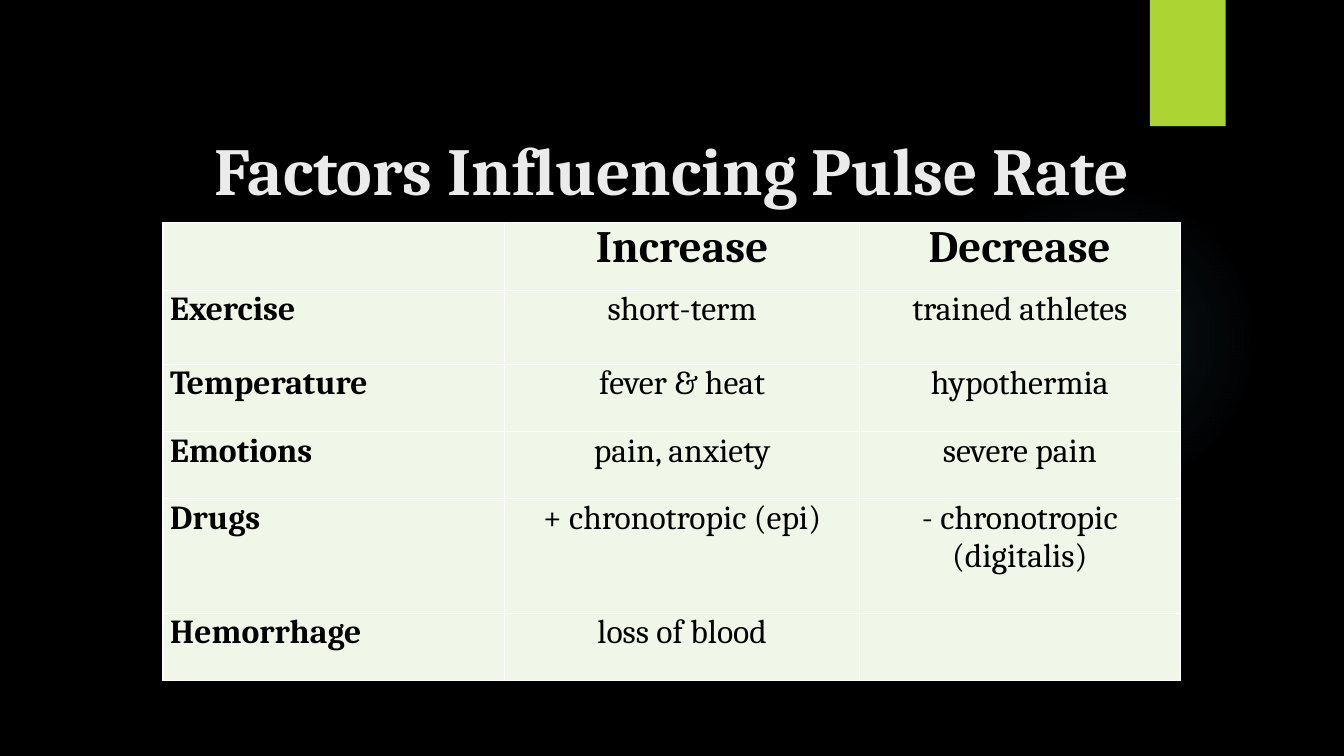
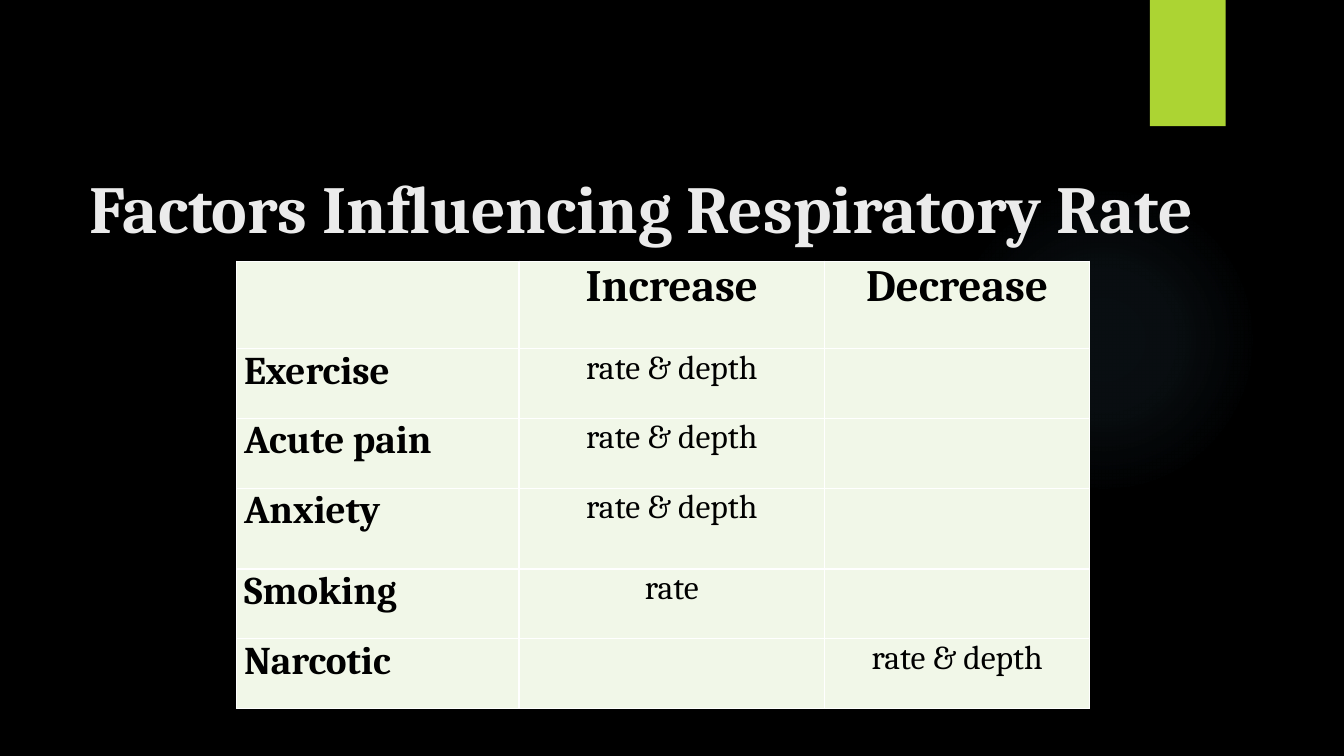
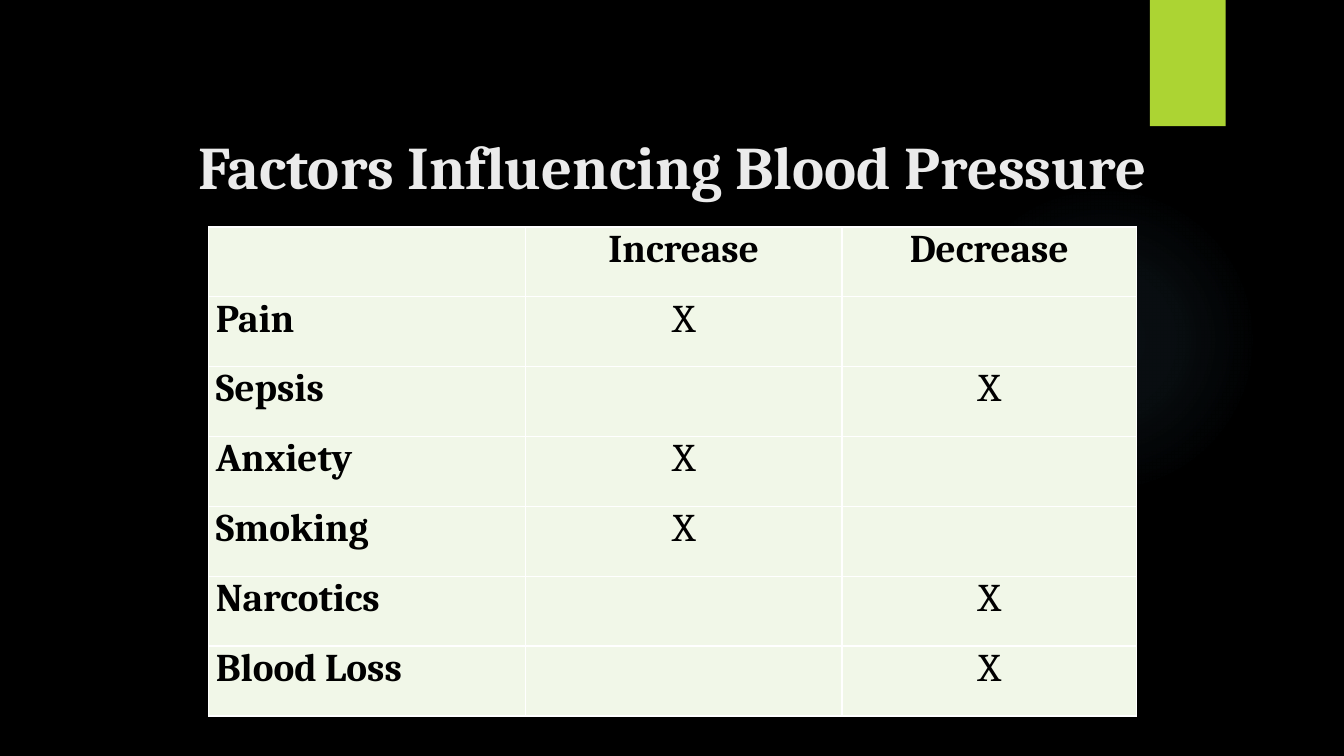
"""Build three slides on the factors that change vital signs."""
import pptx
import pptx.util
import pptx.dml.color
import pptx.enum.shapes
import pptx.enum.text
import pptx.oxml
import pptx.oxml.ns

Cm, Pt = pptx.util.Cm, pptx.util.Pt
ALIGN = pptx.enum.text.PP_ALIGN
FONT = "Cambria"
COLOR = {"back": "000000", "bar": "ACD433", "glow": "7AC4F0", "title": "EBEBEB",
         "cell": "F1F7E8", "text": "000000", "line": "FFFFFF"}
GLOW = [(0, 7), (36, 6), (69, 0)]
HEAD = ("", "Increase", "Decrease")

SLIDES = [
    {"title": "Factors Influencing Pulse Rate", "size": 48, "align": ALIGN.CENTER,
     "box": (3.89, 2.87, 26.09, 2.77), "at": (4.11, 5.61),
     "cols": (8.61, 8.94, 8.08), "rows": (1.71, 1.87, 1.69, 1.69, 2.88, 1.7),
     "sizes": {"head": 32, "label": 24, "body": 24},
     "data": [("Exercise", "short-term", "trained athletes"),
              ("Temperature", "fever & heat", "hypothermia"),
              ("Emotions", "pain, anxiety", "severe pain"),
              ("Drugs", "+ chronotropic (epi)", "- chronotropic (digitalis)"),
              ("Hemorrhage", "loss of blood", "")]},
    {"title": "Factors Influencing Respiratory Rate", "size": 48, "align": ALIGN.LEFT,
     "box": (2.01, 3.81, 29.44, 2.77), "at": (5.97, 6.58),
     "cols": (7.11, 7.7, 6.68), "rows": (2.21, 1.76, 1.76, 2.03, 1.76, 1.76),
     "sizes": {"head": 32, "label": 28, "body": 24},
     "data": [("Exercise", "rate & depth", ""),
              ("Acute pain", "rate & depth", ""),
              ("Anxiety", "rate & depth", ""),
              ("Smoking", "rate", ""),
              ("Narcotic", "", "rate & depth")]},
    {"title": "Factors Influencing Blood Pressure", "size": 43.2, "align": ALIGN.CENTER,
     "box": (3.4, 2.87, 27.08, 2.59), "at": (5.26, 5.72),
     "cols": (7.98, 7.98, 7.42), "rows": (1.76,) * 7,
     "sizes": {"head": 28, "label": 28, "body": 28},
     "data": [("Pain", "X", ""),
              ("Sepsis", "", "X"),
              ("Anxiety", "X", ""),
              ("Smoking", "X", ""),
              ("Narcotics", "", "X"),
              ("Blood Loss", "", "X")]},
]


def rgb(name):
    return pptx.dml.color.RGBColor.from_string(COLOR[name])


def parse(text):
    return pptx.oxml.parse_xml(text.replace(">", " " + pptx.oxml.ns.nsdecls("a") + ">", 1))


def style(part, size, color, bold, align):
    part.alignment = align
    for run in part.runs:
        font = run.font
        font.name, font.size, font.bold = FONT, Pt(size), bold
        font.color.rgb = rgb(color)


def add_shape(slide, kind, box):
    shape = slide.shapes.add_shape(kind, *map(Cm, box))
    shape.shadow.inherit = False
    shape.line.fill.background()
    return shape


def set_master(deck, slide):
    master = deck.slide_master
    fill = master.background.fill
    fill.solid()
    fill.fore_color.rgb = rgb("back")
    kinds = pptx.enum.shapes.MSO_SHAPE
    glow = add_shape(slide, kinds.OVAL, (23.9, 4.65, 7.82, 7.82))
    glow.fill.background()
    stops = "".join(
        f'<a:gs pos="{pos * 1000}"><a:srgbClr val="{COLOR["glow"]}">'
        f'<a:alpha val="{alpha * 1000}"/></a:srgbClr></a:gs>' for pos, alpha in GLOW)
    props = glow.element.spPr
    props.replace(props.find(pptx.oxml.ns.qn("a:noFill")), parse(
        f'<a:gradFill><a:gsLst>{stops}</a:gsLst><a:path path="circle">'
        '<a:fillToRect l="50000" t="50000" r="50000" b="50000"/></a:path></a:gradFill>'))
    bar = add_shape(slide, kinds.RECTANGLE, (28.98, 0, 1.91, 3.18))
    bar.fill.solid()
    bar.fill.fore_color.rgb = rgb("bar")
    for spot, shape in enumerate((glow, bar), 2):
        master.shapes.element.insert(spot, shape.element)


def add_title(slide, item):
    title = slide.shapes.title
    title.left, title.top, title.width, title.height = map(Cm, item["box"])
    frame = title.text_frame
    frame.text = item["title"]
    frame.auto_size = pptx.enum.text.MSO_AUTO_SIZE.NONE
    frame.vertical_anchor = pptx.enum.text.MSO_ANCHOR.MIDDLE
    style(frame.paragraphs[0], item["size"], "title", True, item["align"])


def set_cell(cell, text, size, bold, align):
    cell.margin_left = cell.margin_right = Cm(0.18)
    cell.margin_top = cell.margin_bottom = 0
    cell.fill.solid()
    cell.fill.fore_color.rgb = rgb("cell")
    props = cell._tc.get_or_add_tcPr()
    for spot, side in enumerate("LRTB"):
        props.insert(spot, parse(
            f'<a:ln{side} w="12700"><a:solidFill><a:srgbClr val="{COLOR["line"]}"/>'
            f'</a:solidFill></a:ln{side}>'))
    cell.text_frame.text = text
    style(cell.text_frame.paragraphs[0], size, "text", bold, align)


def add_table(slide, item):
    cols, rows = item["cols"], item["rows"]
    box = (*item["at"], sum(cols), sum(rows))
    table = slide.shapes.add_table(len(rows), len(cols), *map(Cm, box)).table
    table.first_row = table.horz_banding = False
    for col, width in zip(table.columns, cols):
        col.width = Cm(width)
    for row, height in zip(table.rows, rows):
        row.height = Cm(height)
    for i, texts in enumerate([HEAD, *item["data"]]):
        for j, text in enumerate(texts):
            role = "head" if i == 0 else "label" if j == 0 else "body"
            align = ALIGN.LEFT if j == 0 else ALIGN.CENTER
            set_cell(table.cell(i, j), text, item["sizes"][role], role != "body", align)


def main():
    deck = pptx.Presentation()
    deck.slide_width, deck.slide_height = Cm(33.87), Cm(19.05)
    for i, item in enumerate(SLIDES):
        slide = deck.slides.add_slide(deck.slide_layouts[5])
        if i == 0:
            set_master(deck, slide)
        add_title(slide, item)
        add_table(slide, item)
    deck.save("out.pptx")


if __name__ == "__main__":
    main()
